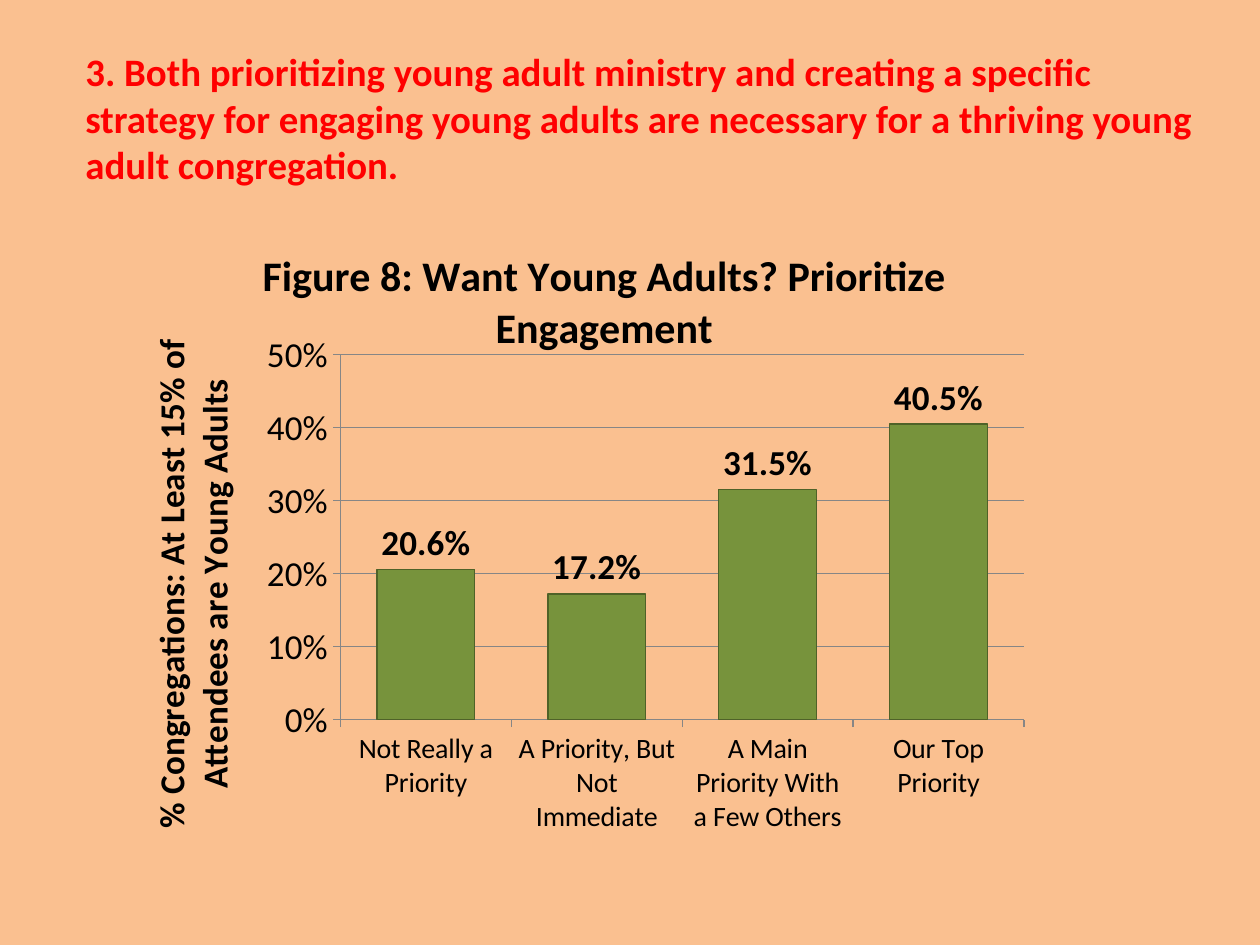
from lxml import etree
from pptx import Presentation
from pptx.chart.data import CategoryChartData
from pptx.dml.color import RGBColor
from pptx.enum.chart import XL_CHART_TYPE, XL_LABEL_POSITION, XL_TICK_MARK
from pptx.oxml.ns import qn
from pptx.util import Inches, Pt

COLUMNS = XL_CHART_TYPE.COLUMN_CLUSTERED
OUTSIDE_END = XL_LABEL_POSITION.OUTSIDE_END
TICK_OUTSIDE = XL_TICK_MARK.OUTSIDE

PEACH = RGBColor(0xFA, 0xC0, 0x90)
RED = RGBColor(0xFF, 0x00, 0x00)
BLACK = RGBColor(0x00, 0x00, 0x00)
GREEN = RGBColor(0x77, 0x93, 0x3C)
DARK_GREEN = RGBColor(0x4F, 0x62, 0x28)
GRAY = RGBColor(0x86, 0x86, 0x86)


def style_font(font, size, color=BLACK, bold=False):
    font.name = "Calibri"
    font.size = Pt(size)
    font.color.rgb = color
    font.bold = bold


prs = Presentation()
prs.slide_width = Inches(10)
prs.slide_height = Inches(7.5)
slide = prs.slides.add_slide(prs.slide_layouts[6])
slide.background.fill.solid()
slide.background.fill.fore_color.rgb = PEACH

# Finding statement
finding = slide.shapes.add_textbox(
    Inches(0.58), Inches(0.33), Inches(9), Inches(1.17)).text_frame
finding.word_wrap = True
statement = finding.paragraphs[0]
statement.text = (
    "3. Both prioritizing young adult ministry and creating a specific strategy "
    "for engaging young adults are necessary for a thriving young adult congregation."
)
statement.space_before = Pt(4.4)
style_font(statement.font, 22.2, RED, bold=True)

# Chart of congregations by priority level
priorities = CategoryChartData(number_format="0.0%")
priorities.categories = [
    "Not Really a Priority",
    "A Priority, But Not Immediate",
    "A Main Priority With a Few Others",
    "Our Top Priority",
]
priorities.add_series("Series 1", [0.206, 0.172, 0.315, 0.405])
chart = slide.shapes.add_chart(
    COLUMNS, Inches(0.92), Inches(1.75), Inches(7.75), Inches(5.08), priorities).chart
style_font(chart.font, 20)
chart.has_legend = False

# Axes
share_axis = chart.value_axis
share_axis.minimum_scale = 0
share_axis.maximum_scale = 0.5
share_axis.major_unit = 0.1
share_axis.tick_labels.number_format = "0%"
share_axis.tick_labels.number_format_is_linked = False
share_axis.major_gridlines.format.line.color.rgb = GRAY
priority_axis = chart.category_axis
style_font(priority_axis.tick_labels.font, 16)
for axis in (share_axis, priority_axis):
    axis.major_tick_mark = TICK_OUTSIDE
    axis.format.line.color.rgb = GRAY

# Chart and axis titles
for titled, text, size in (
    (chart, "Figure 8: Want Young Adults? Prioritize Engagement", 24),
    (share_axis, "% Congregations: At Least 15% of Attendees are Young Adults", 20),
):
    titled.has_title = True
    title_frame = (titled.chart_title if titled is chart else titled.axis_title).text_frame
    title_frame.text = text
    style_font(title_frame.paragraphs[0].font, size, bold=True)

# Columns and their labels
plot = chart.plots[0]
plot.gap_width = 75
plot.vary_by_categories = False
columns = plot.series[0].format
columns.fill.solid()
columns.fill.fore_color.rgb = GREEN
columns.line.color.rgb = DARK_GREEN
columns.line.width = Pt(0.75)
plot.has_data_labels = True
labels = plot.data_labels
labels.show_value = True
labels.number_format = "0.0%"
labels.number_format_is_linked = False
labels.position = OUTSIDE_END
style_font(labels.font, 20, bold=True)

# Fixed inner plot area, as fractions of the chart
plot_area = chart.element.find(".//" + qn("c:plotArea"))
layout = plot_area.find(qn("c:layout"))
if layout is None:
    layout = etree.Element(qn("c:layout"))
    plot_area.insert(0, layout)
manual = etree.SubElement(layout, qn("c:manualLayout"))
for tag, value in (
    ("layoutTarget", "inner"), ("xMode", "edge"), ("yMode", "edge"),
    ("x", "0.23"), ("y", "0.21"), ("w", "0.7"), ("h", "0.57"),
):
    etree.SubElement(manual, qn("c:" + tag)).set("val", value)

prs.save("out.pptx")
